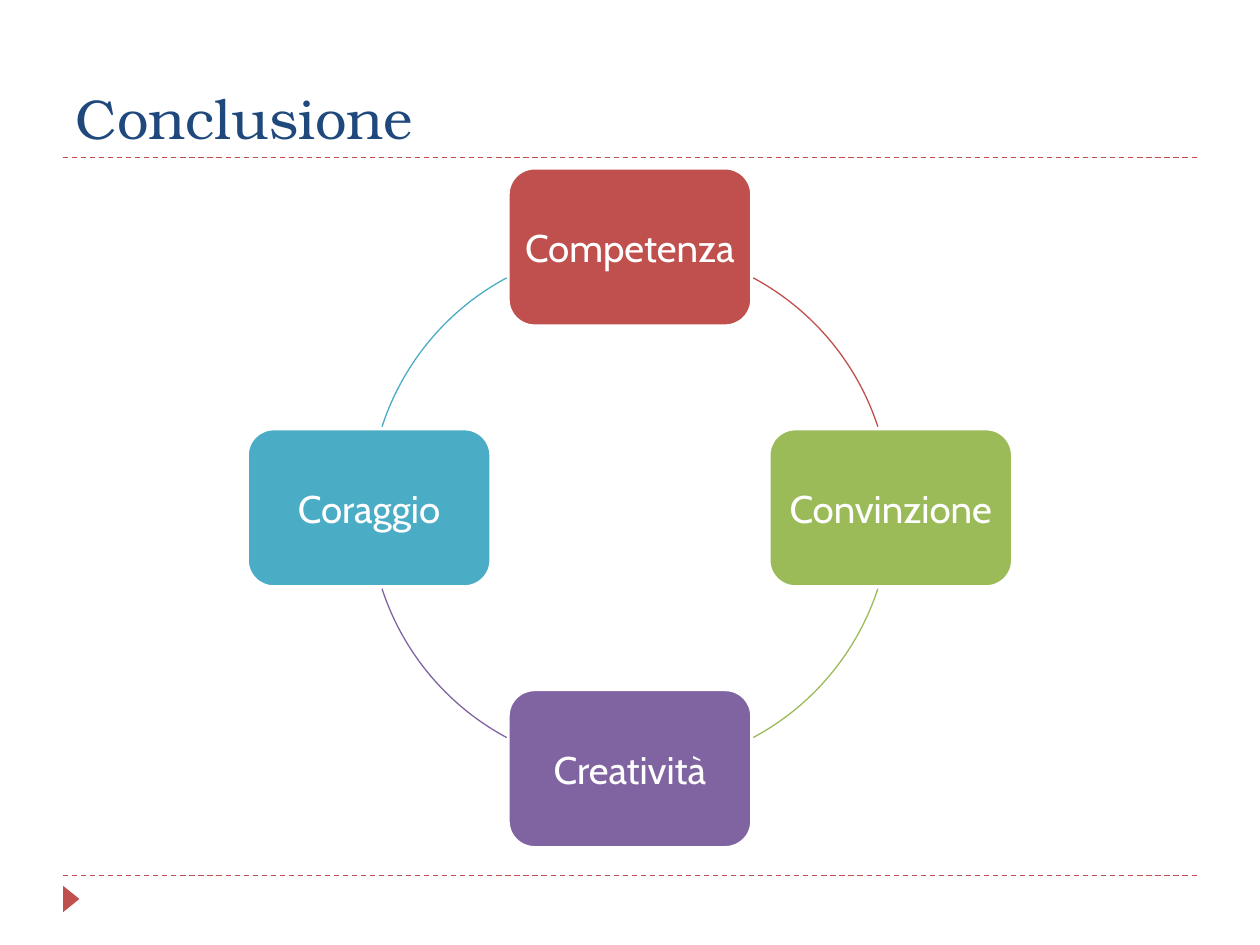
"""Build the closing slide: a cycle of four qualities joined by arcs."""
import math

from pptx import Presentation
from pptx.dml.color import RGBColor
from pptx.enum.dml import MSO_LINE
from pptx.enum.shapes import MSO_CONNECTOR, MSO_SHAPE
from pptx.enum.text import MSO_ANCHOR, MSO_AUTO_SIZE, PP_ALIGN
from pptx.util import Inches, Pt
from lxml import etree

DASH = MSO_LINE.DASH
STRAIGHT = MSO_CONNECTOR.STRAIGHT
ARC, ROUNDED, TRIANGLE = MSO_SHAPE.ARC, MSO_SHAPE.ROUNDED_RECTANGLE, MSO_SHAPE.ISOSCELES_TRIANGLE
MIDDLE, BOTTOM = MSO_ANCHOR.MIDDLE, MSO_ANCHOR.BOTTOM
NO_AUTOFIT = MSO_AUTO_SIZE.NONE
LEFT, CENTER = PP_ALIGN.LEFT, PP_ALIGN.CENTER

NAVY = RGBColor(0x1F, 0x49, 0x7D)
WHITE = RGBColor(0xFF, 0xFF, 0xFF)
RED = RGBColor(0xC0, 0x50, 0x4D)
GREEN = RGBColor(0x9B, 0xBB, 0x59)
PURPLE = RGBColor(0x80, 0x64, 0xA2)
BLUE = RGBColor(0x4B, 0xAC, 0xC6)

DRAWING_NS = "http://schemas.openxmlformats.org/drawingml/2006/main"
QUALITIES = [("Competenza", RED), ("Convinzione", GREEN), ("Creatività", PURPLE), ("Coraggio", BLUE)]
CENTER_X, CENTER_Y, RADIUS = 5, 4.03, 2.07
BOX_WIDTH, BOX_HEIGHT = 1.93, 1.25
ARC_SPANS = [(298.2, 341.9), (18.1, 61.8), (118.2, 161.9), (198.1, 241.8)]
DEGREE_UNIT = 0.6

TITLE_FRAME = {"vertical_anchor": BOTTOM, "word_wrap": True, "auto_size": NO_AUTOFIT}
BOX_FRAME = {"vertical_anchor": MIDDLE, "word_wrap": False}
BOX_FRAME.update({f"margin_{side}": Inches(0.09) for side in ("left", "top", "right", "bottom")})
TITLE_FONT = {"name": "TeX Gyre Bonum", "size": Pt(32)}
BOX_FONT = {"name": "Cabin", "size": Pt(22)}


def apply_format(target, values):
    """Set each named attribute on the target."""
    for name, value in values.items():
        setattr(target, name, value)


def write_text(shape, text, frame_format, font_format, color, alignment):
    """Write one formatted paragraph into a shape."""
    apply_format(shape.text_frame, frame_format)
    para = shape.text_frame.paragraphs[0]
    para.alignment = alignment
    span = para.add_run()
    span.text = text
    apply_format(span.font, font_format)
    span.font.color.rgb = color


def add_title(page, text):
    """Place and fill the title placeholder."""
    title = page.shapes.title
    apply_format(title, {"left": Inches(0.5), "top": Inches(0.17),
                         "width": Inches(9), "height": Inches(1.08)})
    write_text(title, text, TITLE_FRAME, TITLE_FONT, NAVY, LEFT)


def add_rule(page, y):
    """Draw a dashed line across the page."""
    rule = page.shapes.add_connector(STRAIGHT, Inches(0.5), Inches(y), Inches(9.5), Inches(y))
    rule.line.color.rgb = RED
    apply_format(rule.line, {"width": Pt(0.75), "dash_style": DASH})
    etree.SubElement(rule._element.spPr, f"{{{DRAWING_NS}}}effectLst")


def add_marker(page):
    """Draw the small triangle that points right at the foot."""
    marker = page.shapes.add_shape(TRIANGLE, Inches(0.46), Inches(7.07), Inches(0.21), Inches(0.13))
    marker.rotation = 90
    marker.shadow.inherit = False
    marker.fill.solid()
    marker.fill.fore_color.rgb = RED
    marker.line.fill.background()


def add_box(page, text, color, center_x, center_y):
    """Draw a rounded box around a centre point."""
    box = page.shapes.add_shape(ROUNDED, Inches(center_x - BOX_WIDTH / 2),
                                Inches(center_y - BOX_HEIGHT / 2),
                                Inches(BOX_WIDTH), Inches(BOX_HEIGHT))
    box.shadow.inherit = False
    box.fill.solid()
    box.fill.fore_color.rgb = color
    box.line.color.rgb = WHITE
    box.line.width = Pt(1.5)
    write_text(box, text, BOX_FRAME, BOX_FONT, WHITE, CENTER)


def add_arc(page, start, end, color):
    """Draw a part of the circle between two angles in degrees."""
    arc = page.shapes.add_shape(ARC, Inches(CENTER_X - RADIUS), Inches(CENTER_Y - RADIUS),
                                Inches(2 * RADIUS), Inches(2 * RADIUS))
    arc.adjustments[0] = start * DEGREE_UNIT
    arc.adjustments[1] = end * DEGREE_UNIT
    arc.shadow.inherit = False
    arc.fill.background()
    arc.line.color.rgb = color
    arc.line.width = Pt(0.75)


def add_cycle(page):
    """Place the boxes clockwise from the top, each followed by its arc."""
    for index, ((text, color), (start, end)) in enumerate(zip(QUALITIES, ARC_SPANS)):
        angle = math.radians(90 * index - 90)
        add_box(page, text, color, CENTER_X + RADIUS * math.cos(angle),
                CENTER_Y + RADIUS * math.sin(angle))
        add_arc(page, start, end, color)


def main():
    """Build and save the deck."""
    deck = Presentation()
    deck.slide_width, deck.slide_height = Inches(10), Inches(7.5)
    page = deck.slides.add_slide(deck.slide_layouts[5])
    for y in (6.95, 1.25):
        add_rule(page, y)
    add_marker(page)
    add_title(page, "Conclusione")
    add_cycle(page)
    deck.save("out.pptx")


if __name__ == "__main__":
    main()
